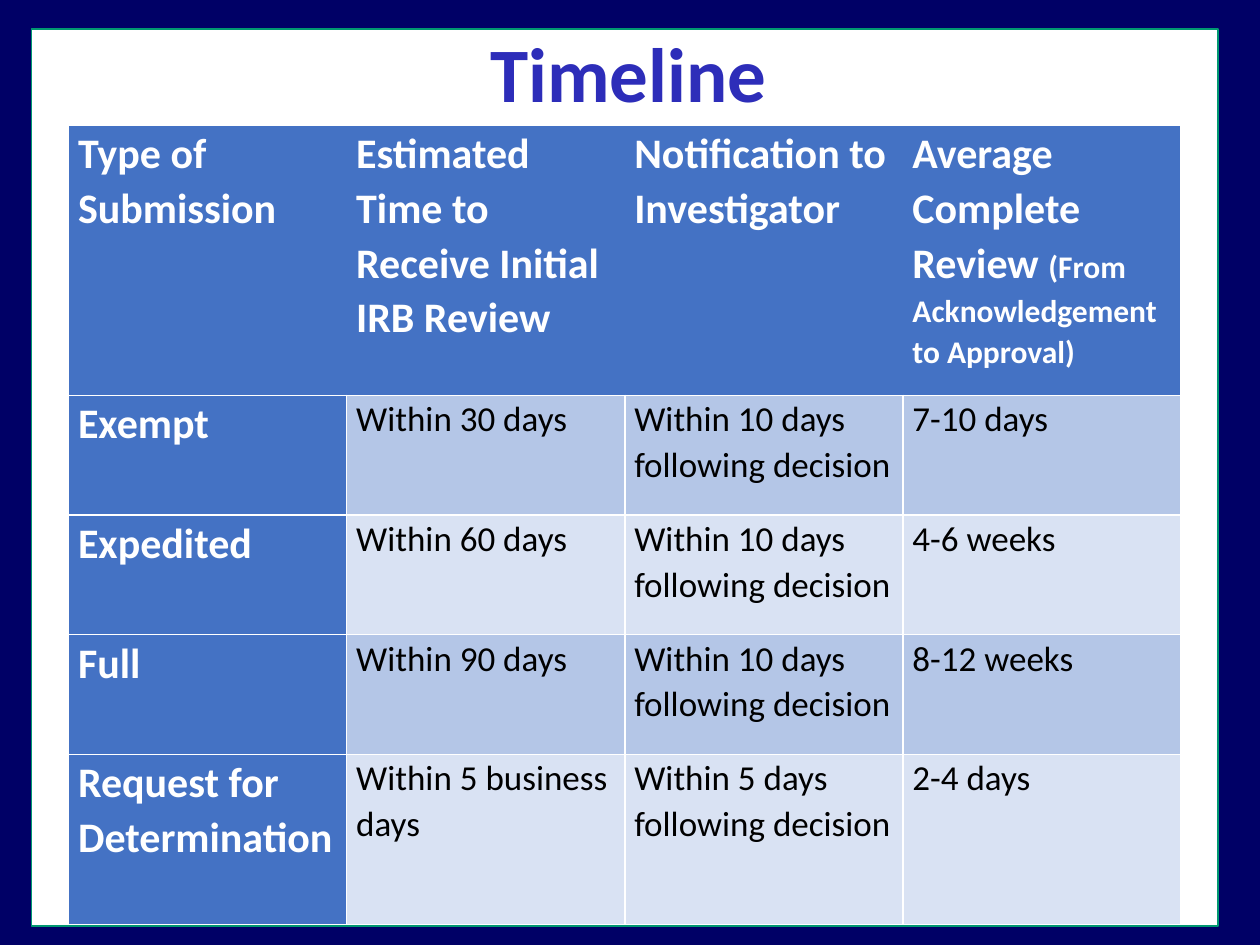
import pptx
import pptx.util
import pptx.dml.color
import pptx.enum.shapes
import pptx.oxml
import pptx.oxml.ns

Pt = pptx.util.Pt

COLORS = {
    "backdrop": "000066", "panel": "FFFFFF", "panel_line": "009771",
    "title": "2D2DB9", "head": "4472C4", "head_text": "FFFFFF",
    "odd": "B4C6E7", "even": "D9E2F3", "body_text": "000000", "grid": "FFFFFF",
}
FONT = "Calibri"
TITLE = "Timeline"
HEADER = ["Type of Submission", "Estimated Time to Receive Initial IRB Review",
          "Notification to Investigator", "Average Complete Review "]
HEADER_NOTE = "(From Acknowledgement to Approval)"
ROWS = [
    ["Exempt", "Within 30 days", "Within 10 days following decision", "7-10 days"],
    ["Expedited", "Within 60 days", "Within 10 days following decision", "4-6 weeks"],
    ["Full", "Within 90 days", "Within 10 days following decision", "8-12 weeks"],
    ["Request for Determination", "Within 5 business days",
     "Within 5 days following decision", "2-4 days"],
]
ROW_HEIGHTS = [154.5, 68.4, 68.4, 68.4, 97.2]
COLUMN_WIDTH = 158.95


def rgb(name):
    return pptx.dml.color.RGBColor.from_string(COLORS[name])


def paint(fill, name):
    fill.solid()
    fill.fore_color.rgb = rgb(name)


def add_span(para, text, size, color, bold):
    span = para.add_run()
    span.text = text
    span.font.name = FONT
    span.font.size = Pt(size)
    span.font.bold = bold
    span.font.color.rgb = rgb(color)


def add_borders(cell, hidden):
    properties = cell._tc.get_or_add_tcPr()
    namespace = pptx.oxml.ns.nsdecls("a")
    for side in "LRTB":
        stroke = "<a:noFill/>" if side in hidden else (
            f'<a:solidFill><a:srgbClr val="{COLORS["grid"]}"/></a:solidFill>')
        properties.append(pptx.oxml.parse_xml(
            f'<a:ln{side} {namespace} w="{Pt(1)}">{stroke}</a:ln{side}>'))


def add_panel(page):
    panel = page.shapes.add_shape(pptx.enum.shapes.MSO_SHAPE.RECTANGLE,
                                  Pt(18), Pt(16.5), Pt(678), Pt(512.5))
    panel.shadow.inherit = False
    paint(panel.fill, "panel")
    panel.line.color.rgb = rgb("panel_line")
    panel.line.width = Pt(1)


def add_timeline(page):
    content = [HEADER] + ROWS
    columns = len(HEADER)
    table = page.shapes.add_table(len(content), columns, Pt(39.2), Pt(71.4),
                                  Pt(COLUMN_WIDTH * columns), Pt(sum(ROW_HEIGHTS))).table
    table.first_row = table.horz_banding = False
    for column in table.columns:
        column.width = Pt(COLUMN_WIDTH)
    for r, (height, texts) in enumerate(zip(ROW_HEIGHTS, content)):
        table.rows[r].height = Pt(height)
        for c, text in enumerate(texts):
            cell = table.cell(r, c)
            is_head = r == 0 or c == 0
            hidden = ("L" if c > 0 else "") + ("R" if c < columns - 1 else "")
            add_borders(cell, hidden if r == 0 else "")
            paint(cell.fill, "head" if is_head else "odd" if r % 2 else "even")
            cell.margin_left = cell.margin_right = Pt(5.4)
            cell.margin_top = cell.margin_bottom = Pt(0)
            para = cell.text_frame.paragraphs[0]
            para.line_spacing = 1.07
            add_span(para, text, 24 if is_head else 20,
                     "head_text" if is_head else "body_text", is_head)
    add_span(table.cell(0, columns - 1).text_frame.paragraphs[0],
             HEADER_NOTE, 18, "head_text", True)


def add_title(page):
    box = page.shapes.add_textbox(Pt(273), Pt(10.8), Pt(173.5), Pt(60.5))
    box.text_frame.word_wrap = False
    add_span(box.text_frame.paragraphs[0], TITLE, 44, "title", True)


def main():
    deck = pptx.Presentation()
    deck.slide_width, deck.slide_height = Pt(720), Pt(540)
    page = deck.slides.add_slide(deck.slide_layouts[6])
    paint(page.background.fill, "backdrop")
    add_panel(page)
    add_timeline(page)
    add_title(page)
    deck.save("out.pptx")


if __name__ == "__main__":
    main()
